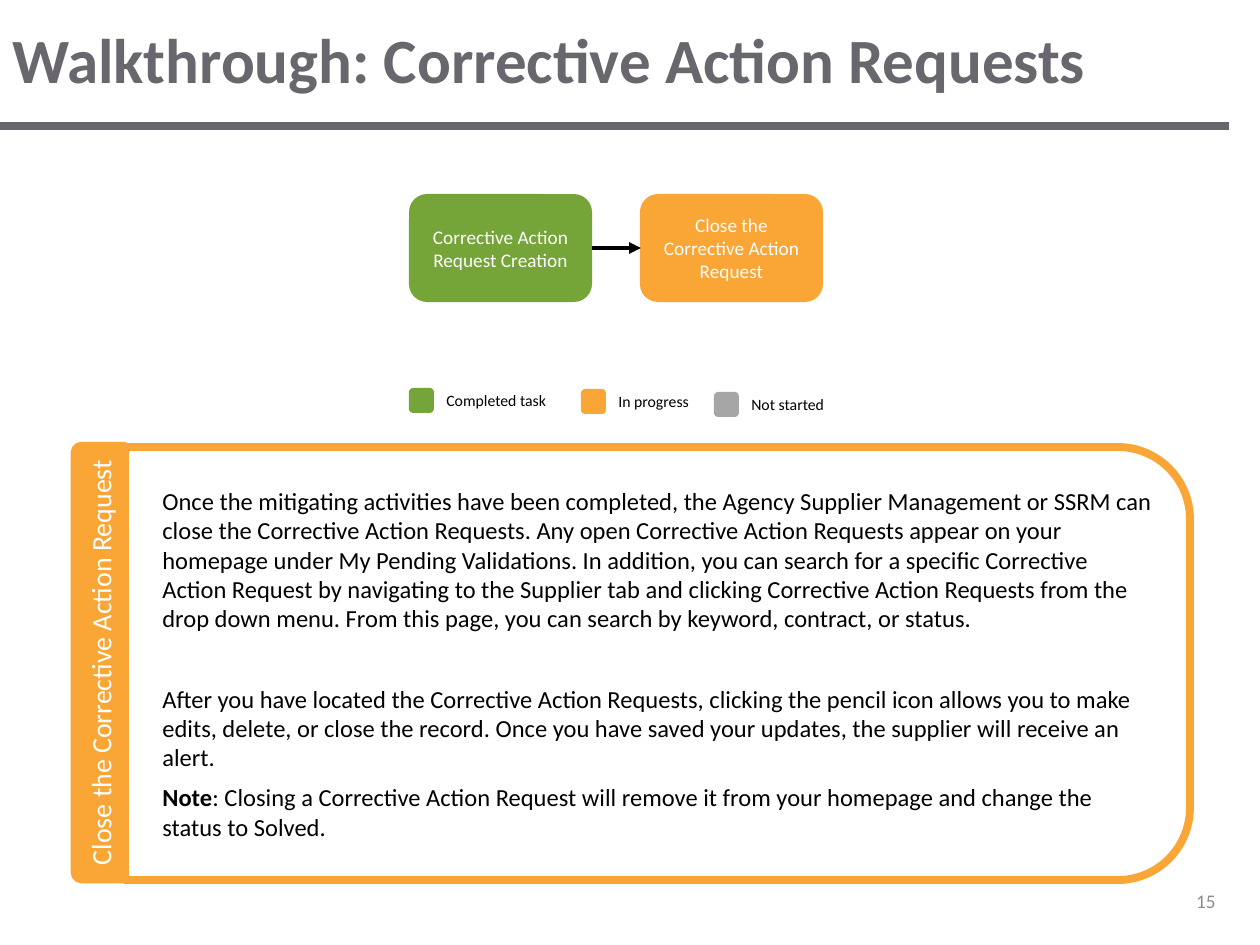
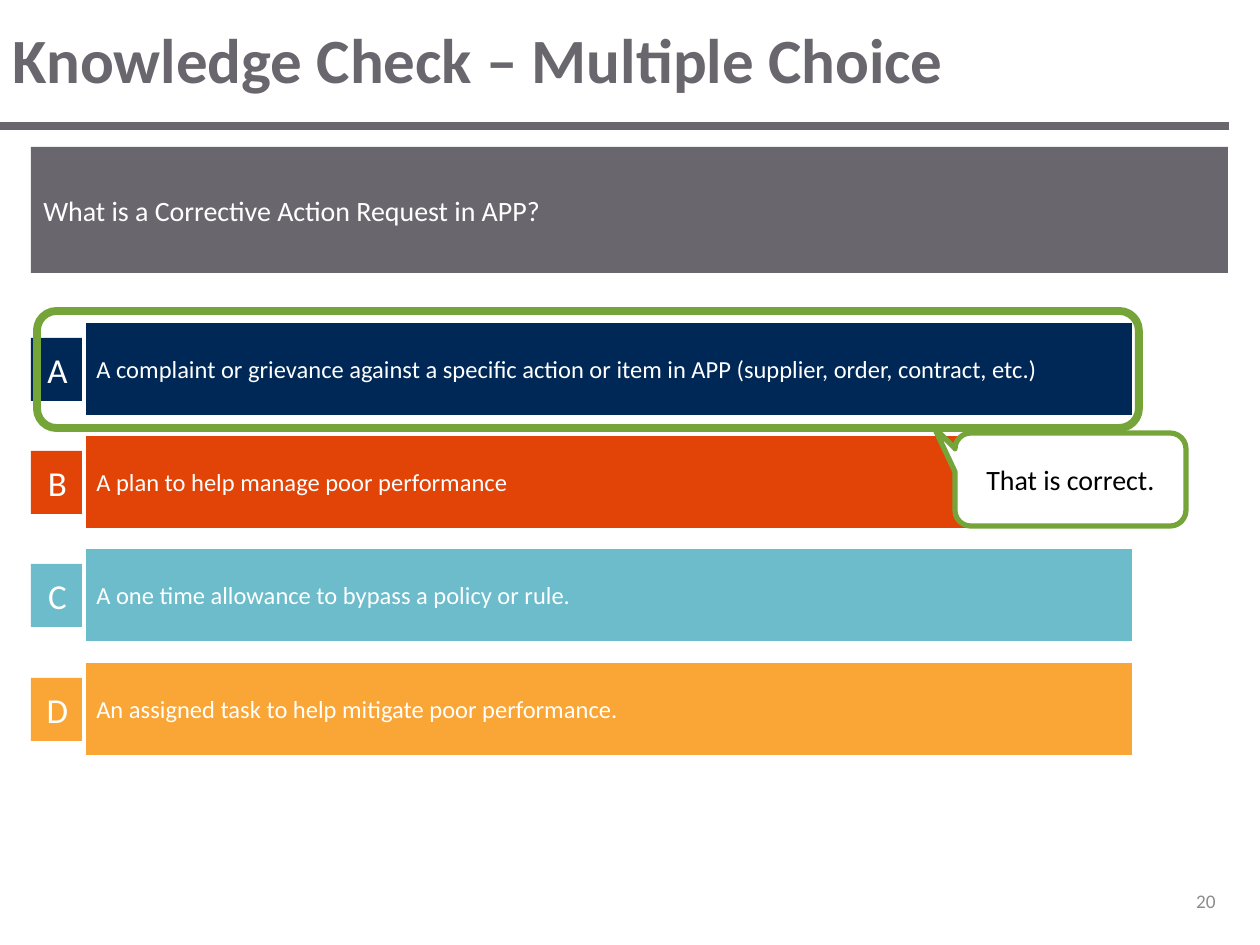
"""Build two training slides: a task walkthrough and a knowledge check."""
import pptx
import pptx.util
import pptx.dml.color
import pptx.enum.shapes
import pptx.enum.text
import pptx.oxml.ns
import lxml.etree

PX = 914400 // 126
FONT = "Calibri"
GREY, GREEN, GOLD = "69676D", "75A439", "FAA636"
WHITE, BLACK = "FFFFFF", "000000"
KIND = pptx.enum.shapes.MSO_SHAPE
ALIGN = pptx.enum.text.PP_ALIGN
MIDDLE = pptx.enum.text.MSO_ANCHOR.MIDDLE
Pt = pptx.util.Pt


def tint(code):
    return pptx.dml.color.RGBColor.from_string(code)


def box(slide, kind, place, fill=None, edge=None, width=0, words=(),
        size=11, ink=WHITE, align=ALIGN.CENTER, gap=0):
    spot = [n * PX for n in place]
    if kind is None:
        shape = slide.shapes.add_textbox(*spot)
    else:
        shape = slide.shapes.add_shape(kind, *spot)
        shape.shadow.inherit = False
        if fill:
            shape.fill.solid()
            shape.fill.fore_color.rgb = tint(fill)
        else:
            shape.fill.background()
        if edge:
            shape.line.color.rgb = tint(edge)
            shape.line.width = Pt(width)
        else:
            shape.line.fill.background()
    frame = shape.text_frame
    frame.word_wrap = True
    frame.vertical_anchor = MIDDLE
    for i, text in enumerate(words):
        para = frame.add_paragraph() if i else frame.paragraphs[0]
        para.text = text
        para.alignment = align
        para.space_before = para.space_after = Pt(gap)
        para.font.name = FONT
        para.font.size = Pt(size)
        para.font.color.rgb = tint(ink)
    return shape


deck = pptx.Presentation()
deck.slide_width, deck.slide_height = 1260 * PX, 945 * PX
rules = []

for head, page in [("Walkthrough: Corrective Action Requests", "15"),
                   ("Knowledge Check – Multiple Choice", "20")]:
    slide = deck.slides.add_slide(deck.slide_layouts[5])
    title = slide.shapes.title
    title.left, title.top, title.width, title.height = 0, 0, 1260 * PX, 116 * PX
    title.text = head
    title.text_frame.vertical_anchor = MIDDLE
    para = title.text_frame.paragraphs[0]
    para.alignment = ALIGN.LEFT
    para.font.name, para.font.size, para.font.bold = FONT, Pt(36), True
    para.font.color.rgb = tint(GREY)
    box(slide, None, (1018, 876, 210, 50), words=[page], ink="8C8C8C", align=ALIGN.RIGHT)
    rules.append((slide, 0, 1229, 126, GREY, 5, False))

walk, quiz = deck.slides

for left, top, fill, label in [(409, 388, GREEN, "Completed task"),
                               (581, 389, GOLD, "In progress"),
                               (714, 392, "A6A6A6", "Not started")]:
    box(walk, KIND.ROUNDED_RECTANGLE, (left, top, 25, 25), fill)
    box(walk, None, (left + 25, top - 4, 243, 32), words=[label],
        size=9, ink=BLACK, align=ALIGN.LEFT)

task = "Close the Corrective Action Request"
side = box(walk, KIND.ROUND_2_SAME_RECTANGLE, (-120, 636, 438, 53), GOLD, GOLD, 2, [task], 16)
side.rotation = 270

notes = [
    "Once the mitigating activities have been completed, the Agency Supplier Management "
    "or SSRM can close the Corrective Action Requests. Any open Corrective Action Requests "
    "appear on your homepage under My Pending Validations. In addition, you can search for "
    "a specific Corrective Action Request by navigating to the Supplier tab and clicking "
    "Corrective Action Requests from the drop down menu. From this page, you can search by "
    "keyword, contract, or status.",
    "After you have located the Corrective Action Requests, clicking the pencil icon allows "
    "you to make edits, delete, or close the record. Once you have saved your updates, the "
    "supplier will receive an alert.",
    "Note",
]
panel = box(walk, KIND.ROUND_2_SAME_RECTANGLE, (441, 131, 433, 1065), None, GOLD, 4.5,
            notes, 14, BLACK, ALIGN.LEFT)
panel.rotation = 90
panel.element.txBody.bodyPr.set("vert", "vert270")
paras = panel.text_frame.paragraphs
for para in paras:
    para.space_after = Pt(6)
    para._p.get_or_add_pPr().set("marL", str(25 * PX))
paras[1].space_before = Pt(23)
paras[2].runs[0].font.bold = True
paras[2].add_run().text = (": Closing a Corrective Action Request will remove it from your "
                           "homepage and change the status to Solved.")

for left, fill, step in [(409, GREEN, "Corrective Action Request Creation"),
                         (640, GOLD, task)]:
    box(walk, KIND.ROUNDED_RECTANGLE, (left, 194, 183, 108), fill, words=[step])
rules.append((walk, 592, 641, 248, BLACK, 2.25, True))

box(quiz, KIND.RECTANGLE, (31, 147, 1197, 126), GREY, size=16, align=ALIGN.LEFT, gap=6,
    words=["What is a Corrective Action Request in APP?"])

picks = [
    ("A", "002857", "A complaint or grievance against a specific action or item in APP "
                    "(supplier, order, contract, etc.)"),
    ("B", "E24307", "A plan to help manage poor performance"),
    ("C", "6CBCCB", "A one time allowance to bypass a policy or rule."),
    ("D", GOLD, "An assigned task to help mitigate poor performance."),
]
for row, (mark, fill, pick) in enumerate(picks):
    top = 321 + row * 567 // 5
    box(quiz, KIND.RECTANGLE, (31, top + 17, 53, 63), fill, words=[mark], size=20, gap=6)
    box(quiz, KIND.RECTANGLE, (84, top, 1050, 96), fill, WHITE, 2, [pick], 14,
        align=ALIGN.LEFT)

box(quiz, KIND.ROUNDED_RECTANGLE, (37, 311, 1102, 117), None, GREEN, 4.5)
reply = box(quiz, KIND.ROUNDED_RECTANGULAR_CALLOUT, (955, 433, 231, 93), WHITE, GREEN, 3,
            ["That is correct."], 16, BLACK)
for i, ratio in enumerate([-0.59, -0.56, 0.17]):
    reply.adjustments[i] = ratio

for slide, start, end, level, color, weight, tip in rules:
    rule = slide.shapes.add_connector(pptx.enum.shapes.MSO_CONNECTOR.STRAIGHT,
                                      start * PX, level * PX, end * PX, level * PX)
    rule.line.color.rgb = tint(color)
    rule.line.width = Pt(weight)
    if tip:
        lxml.etree.SubElement(rule.line._get_or_add_ln(), pptx.oxml.ns.qn("a:tailEnd"),
                              type="triangle")
    lxml.etree.SubElement(rule.element.spPr, pptx.oxml.ns.qn("a:effectLst"))

deck.save("out.pptx")
